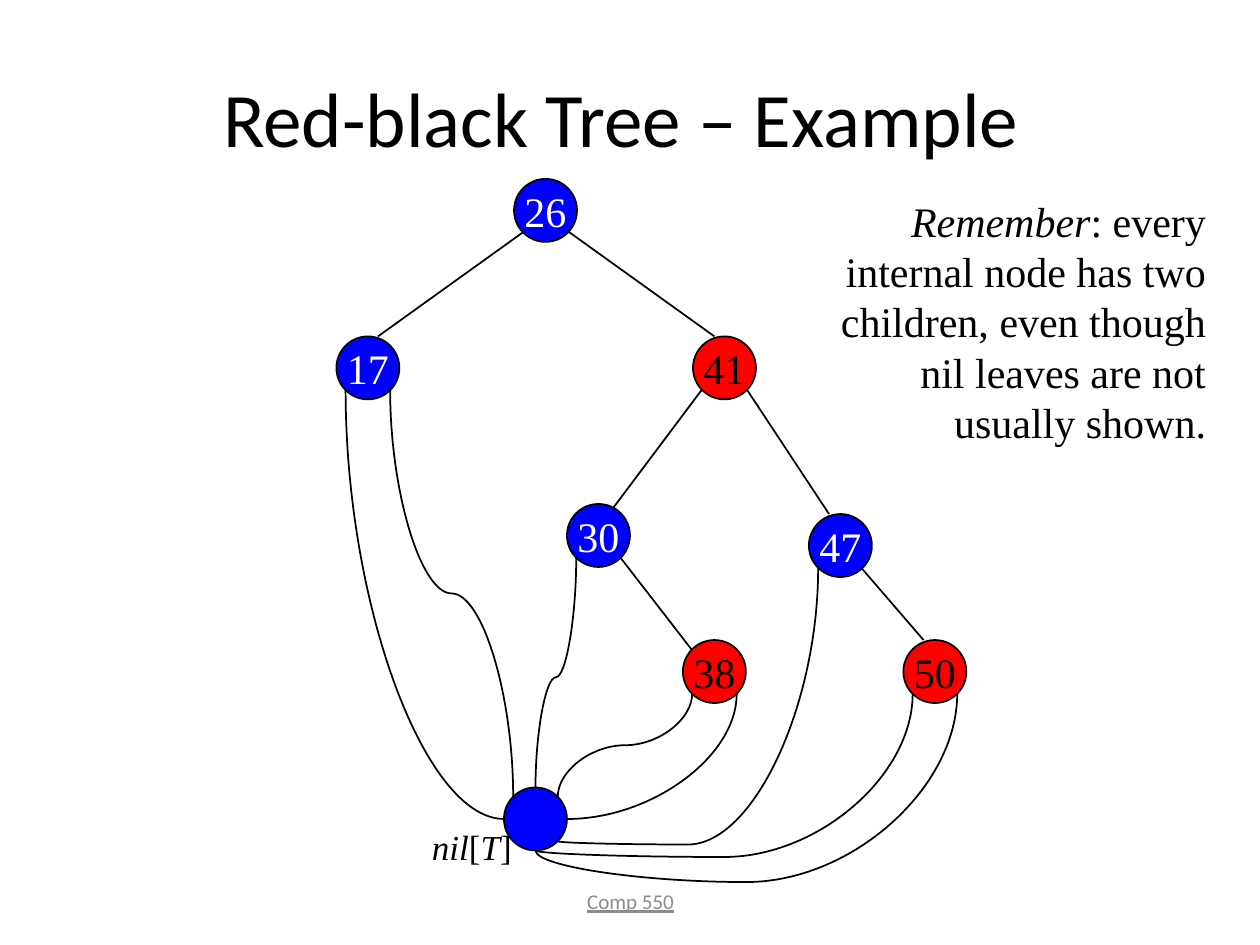
import pptx
import pptx.util
import pptx.dml.color
import pptx.enum.shapes
import pptx.enum.text
import pptx.oxml.ns
from lxml import etree
from pptx.util import Inches, Pt

THEME = {
    "black": "000000", "white": "FFFFFF", "blue": "0000FF", "red": "FF0000",
    "grey": "8C8C8C", "heading font": "Calibri", "body font": "Times New Roman",
    "title": 44, "body": 24, "nil": 20, "footer": 12, "line": 1,
}
DIAMETER = 0.5
OCTANT = DIAMETER / 2 * 0.707

# Tree nodes: name -> left, top, fill, text colour
NODES = {
    "26": (4.08, 1.42, "blue", "white"),
    "17": (2.67, 2.67, "blue", "white"),
    "41": (5.5, 2.67, "red", "black"),
    "30": (4.5, 4, "blue", "white"),
    "47": (6.42, 4.08, "blue", "white"),
    "38": (5.42, 5.08, "red", "black"),
    "50": (7.17, 5.08, "red", "black"),
    "nil": (4, 6.25, "blue", "white"),
}
# Straight edges between internal nodes: start, end
EDGES = [
    ((4.17, 1.83), (3, 2.67)), ((4.5, 1.83), (5.67, 2.67)),
    ((5.58, 3.08), (4.83, 4.08)), ((5.92, 3.08), (6.58, 4.08)),
    ((6.83, 4.5), (7.33, 5.08)), ((4.92, 4.42), (5.5, 5.17)),
]
# Curved edges to nil: parent, parent site, nil site, bend (None is one quarter turn)
NIL_EDGES = [
    ("38", "bottom left", "top right", 0.5),
    ("38", "bottom right", "right", None),
    ("47", "bottom left", "bottom right", 1.012),
    ("30", "bottom left", "top", 0.52),
    ("17", "bottom right", "top left", 0.5),
    ("17", "bottom left", "left", None),
    ("50", "bottom left", "bottom", 1.042),
    ("50", "bottom right", "bottom", 1.202),
]
# Texts: box, runs (text, italic), font, size, colour, alignment, anchor, wrap
TEXTS = {
    "title": ((0.5, 0.3, 9, 1.25), [("Red-black Tree – Example ", False)],
              "heading font", "title", "black", "CENTER", "MIDDLE", True),
    "footer": ((3.42, 6.95, 3.17, 0.4), [("Comp 550", False)],
               "heading font", "footer", "grey", "CENTER", "MIDDLE", True),
    "nil label": ((3.33, 6.5, 0.86, 0.43),
                  [("nil", True), ("[", False), ("T", True), ("]", False)],
                  "body font", "nil", "black", "LEFT", "TOP", False),
    "remark": ((6.17, 1.5, 3.5, 2.1),
               [("Remember", True), (": every internal node has two children, even "
                                     "though nil leaves are not usually shown.", False)],
               "body font", "body", "black", "RIGHT", "TOP", True),
}


def color(name):
    return pptx.dml.color.RGBColor.from_string(THEME[name])


def write(shape, runs, font, size, ink, alignment, anchor, wrap):
    frame = shape.text_frame
    frame.word_wrap = wrap
    frame.vertical_anchor = getattr(pptx.enum.text.MSO_ANCHOR, anchor)
    paragraph = frame.paragraphs[0]
    paragraph.alignment = getattr(pptx.enum.text.PP_ALIGN, alignment)
    paragraph.font.name = THEME[font]
    paragraph.font.size = Pt(THEME[size])
    paragraph.font.color.rgb = color(ink)
    for text, italic in runs:
        run = paragraph.add_run()
        run.text = text
        if italic:
            run.font.italic = True
    return paragraph


def outline(shape):
    shape.line.color.rgb = color("black")
    shape.line.width = Pt(THEME["line"])


def site(node, place):
    """Point on a node's circle, named by its sides."""
    left, top = NODES[node][:2]
    reach = OCTANT if " " in place else DIAMETER / 2
    across = ("right" in place) - ("left" in place)
    down = ("bottom" in place) - ("top" in place)
    return left + DIAMETER / 2 + across * reach, top + DIAMETER / 2 + down * reach


def add_line(shapes, kind, start, end):
    line = shapes.add_connector(kind, *map(Inches, (*start, *end)))
    outline(line)
    etree.SubElement(line.element.spPr, pptx.oxml.ns.qn("a:effectLst"))
    return line


def add_curve(shapes, start, end, bend):
    """Curve that leaves downward: a sideways connector turned a quarter."""
    width, height = end[1] - start[1], abs(end[0] - start[0])
    left = (start[0] + end[0] - width) / 2
    top = (start[1] + end[1] - height) / 2
    curve = add_line(shapes, pptx.enum.shapes.MSO_CONNECTOR.CURVE,
                     (left, top), (left + width, top + height))
    properties = curve.element.spPr
    transform = properties.find(pptx.oxml.ns.qn("a:xfrm"))
    if end[0] < start[0]:
        transform.set("rot", "5400000")
    else:
        transform.set("rot", "16200000")
        transform.set("flipH", "1")
    geometry = properties.find(pptx.oxml.ns.qn("a:prstGeom"))
    if bend is None:
        geometry.set("prst", "curvedConnector2")
    else:
        guides = geometry.find(pptx.oxml.ns.qn("a:avLst"))
        etree.SubElement(guides, pptx.oxml.ns.qn("a:gd"),
                         name="adj1", fmla=f"val {round(bend * 100000)}")


def main():
    presentation = pptx.Presentation()
    presentation.slide_width, presentation.slide_height = Inches(10), Inches(7.5)
    shapes = presentation.slides.add_slide(presentation.slide_layouts[6]).shapes

    # Straight edges, behind the nodes
    for start, end in EDGES:
        add_line(shapes, pptx.enum.shapes.MSO_CONNECTOR.STRAIGHT, start, end)

    # Nodes
    for name, (left, top, fill, ink) in NODES.items():
        node = shapes.add_shape(pptx.enum.shapes.MSO_SHAPE.OVAL,
                                *map(Inches, (left, top, DIAMETER, DIAMETER)))
        node.shadow.inherit = False
        node.fill.solid()
        node.fill.fore_color.rgb = color(fill)
        outline(node)
        if name != "nil":
            write(node, [(name, False)], "body font", "body", ink,
                  "CENTER", "MIDDLE", False)

    # Curved edges to nil
    for parent, parent_site, nil_site, bend in NIL_EDGES:
        add_curve(shapes, site(parent, parent_site), site("nil", nil_site), bend)

    # Title, footer, nil label and remark
    for name, (box, *content) in TEXTS.items():
        text_box = shapes.add_textbox(*map(Inches, box))
        paragraph = write(text_box, *content)
        if name == "footer":
            paragraph.font.underline = True
        if name == "nil label":
            text_box.text_frame.auto_size = pptx.enum.text.MSO_AUTO_SIZE.SHAPE_TO_FIT_TEXT

    presentation.save("out.pptx")


if __name__ == "__main__":
    main()
